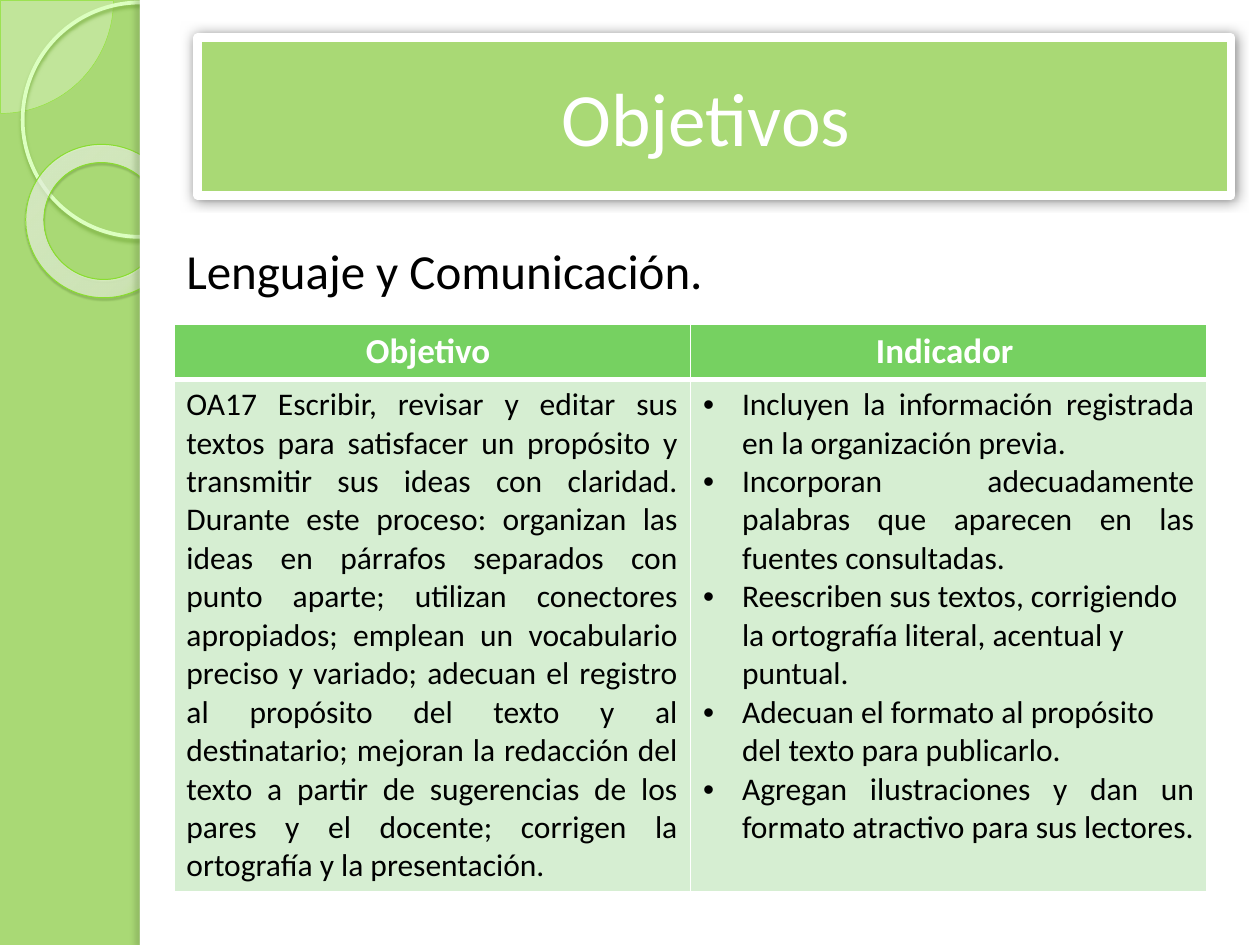
from pptx import Presentation
from pptx.dml.color import RGBColor
from pptx.enum.shapes import MSO_SHAPE
from pptx.enum.text import MSO_ANCHOR, MSO_AUTO_SIZE, PP_ALIGN
from pptx.oxml.ns import qn
from pptx.util import Inches, Pt
from lxml.etree import SubElement

TITLE = "Objetivos "
SUBTITLE = "Lenguaje y Comunicación."
HEADERS = ["Objetivo ", "Indicador "]
OBJECTIVE = (
    "OA17 Escribir, revisar y editar sus textos para satisfacer un propósito y "
    "transmitir sus ideas con claridad. Durante este proceso: organizan las ideas "
    "en párrafos separados con punto aparte; utilizan conectores apropiados; "
    "emplean un vocabulario preciso y variado; adecuan el registro al propósito "
    "del texto y al destinatario; mejoran la redacción del texto a partir de "
    "sugerencias de los pares y el docente; corrigen la ortografía y la presentación."
)
INDICATORS = [
    ("Incluyen la información registrada en la organización previa.", PP_ALIGN.JUSTIFY),
    ("Incorporan adecuadamente palabras que aparecen en las fuentes consultadas.", PP_ALIGN.JUSTIFY),
    ("Reescriben sus textos, corrigiendo la ortografía literal, acentual y puntual.", PP_ALIGN.LEFT),
    ("Adecuan el formato al propósito del texto para publicarlo.", PP_ALIGN.LEFT),
    ("Agregan ilustraciones y dan un formato atractivo para sus lectores.", PP_ALIGN.JUSTIFY),
]

FONT = "Calibri"
WHITE = RGBColor(0xFF, 0xFF, 0xFF)
BLACK = RGBColor(0, 0, 0)
GREEN = RGBColor(0xA9, 0xD9, 0x75)
HEADER_GREEN = RGBColor(0x76, 0xD1, 0x61)
CELL_GREEN = RGBColor(0xD6, 0xEE, 0xD2)
PIE_FILL = RGBColor(0xF2, 0xFF, 0xE7)
PIE_LINE = RGBColor(0x92, 0xE5, 0x39)
RING_LINE = RGBColor(0xDC, 0xFF, 0xC0)
RING_SHADOW = RGBColor(0x7E, 0xB3, 0x44)
DONUT_LINE = RGBColor(0x89, 0xDE, 0x2E)
DONUT_SHADOW = RGBColor(0x3F, 0x62, 0x19)
PANEL_SHADOW = RGBColor(0x54, 0x6E, 0x38)
DONUT_STOPS = [
    (0, RGBColor(0xF6, 0xFF, 0xF0), 70),
    (70, RGBColor(0xFB, 0xFF, 0xF7), 55),
    (100, RGBColor(0x98, 0xFF, 0x28), 60),
]
DONUT_FOCUS = {"l": -408, "t": -50, "r": 508, "b": 150}


def add_color(parent, color, alpha=100):
    element = SubElement(parent, qn("a:srgbClr"), val=str(color))
    if alpha < 100:
        SubElement(element, qn("a:alpha"), val=str(alpha * 1000))


def set_shadow(shape, color, alpha, blur, distance, angle):
    shape.shadow.inherit = False
    effects = shape._element.spPr.find(qn("a:effectLst"))
    shadow = SubElement(
        effects, qn("a:outerShdw"), blurRad=str(Pt(blur)), dist=str(Pt(distance)),
        dir=str(angle * 60000), algn="ctr", rotWithShape="0",
    )
    add_color(shadow, color, alpha)


def set_line(shape, color, width):
    shape.line.color.rgb = color
    shape.line.width = Pt(width)


def add_decoration(slide, kind, box, fill=None, line=None, shadow=None):
    shape = slide.shapes.add_shape(kind, *map(Inches, box))
    shape.shadow.inherit = False
    if fill is None:
        shape.fill.background()
    else:
        shape.fill.solid()
        shape.fill.fore_color.rgb = fill
    if line:
        set_line(shape, *line)
    else:
        shape.line.fill.background()
    if shadow:
        set_shadow(shape, *shadow)
    return shape


def set_donut_gradient(shape):
    properties = shape._element.spPr
    blank = properties.find(qn("a:noFill"))
    gradient = properties.makeelement(qn("a:gradFill"), {"rotWithShape": "1"})
    properties.replace(blank, gradient)
    stops = SubElement(gradient, qn("a:gsLst"))
    for position, color, alpha in DONUT_STOPS:
        add_color(SubElement(stops, qn("a:gs"), pos=str(position * 1000)), color, alpha)
    route = SubElement(gradient, qn("a:path"))
    route.set("path", "circle")
    focus = {side: str(value * 1000) for side, value in DONUT_FOCUS.items()}
    SubElement(route, qn("a:fillToRect"), focus)


def set_font(paragraph, size, color, bold=False):
    paragraph.font.name = FONT
    paragraph.font.size = Pt(size)
    paragraph.font.color.rgb = color
    paragraph.font.bold = bold


def set_bullet(paragraph):
    properties = paragraph._p.get_or_add_pPr()
    properties.set("marL", str(Inches(0.31)))
    properties.set("indent", str(-Inches(0.31)))
    bullet_font = properties.makeelement(qn("a:buFont"), {"typeface": "Arial"})
    bullet = properties.makeelement(qn("a:buChar"), {"char": "•"})
    properties.insert(0, bullet_font)
    properties.insert(1, bullet)


def format_cell(cell, fill, bottom_width):
    cell.fill.solid()
    cell.fill.fore_color.rgb = fill
    properties = cell._tc.get_or_add_tcPr()
    for index, (side, width) in enumerate(zip("LRTB", (1, 1, 1, bottom_width))):
        border = properties.makeelement(qn(f"a:ln{side}"), {"w": str(Pt(width))})
        add_color(SubElement(border, qn("a:solidFill")), WHITE)
        properties.insert(index, border)


def add_decorations(slide):
    pie = add_decoration(slide, MSO_SHAPE.PIE, (-0.89, -0.89, 1.79, 1.79), PIE_FILL, (PIE_LINE, 0.25))
    pie.adjustments[0] = 0
    pie.adjustments[1] = 54
    pie_color = pie._element.spPr.find(qn("a:solidFill"))[0]
    SubElement(pie_color, qn("a:alpha"), val="33000")
    add_decoration(slide, MSO_SHAPE.OVAL, (0.18, 0.02, 1.86, 1.86), None,
                   (RING_LINE, 2.15), (RING_SHADOW, 85, 2, 2, 90))
    donut = add_decoration(slide, MSO_SHAPE.DONUT, (0.2, 1.15, 1.23, 1.21), None,
                           (DONUT_LINE, 0.58), (DONUT_SHADOW, 35, 1, 1.2, 75))
    donut.adjustments[0] = 0.12
    donut.rotation = 38.6
    set_donut_gradient(donut)
    add_decoration(slide, MSO_SHAPE.RECTANGLE, (1.11, 0, 8.89, 7.5), WHITE)
    add_decoration(slide, MSO_SHAPE.RECTANGLE, (1.11, 0, 0.08, 7.5), WHITE,
                   shadow=(PANEL_SHADOW, 25, 3, 3, 180))


def add_title(slide):
    title = slide.shapes.title
    title.left, title.top, title.width, title.height = map(Inches, (1.57, 0.3, 8.2, 1.25))
    title.fill.solid()
    title.fill.fore_color.rgb = GREEN
    set_line(title, WHITE, 5)
    set_shadow(title, BLACK, 50, 7.5, 0, 0)
    frame = title.text_frame
    frame.text = TITLE
    frame.auto_size = MSO_AUTO_SIZE.NONE
    frame.vertical_anchor = MSO_ANCHOR.MIDDLE
    frame.paragraphs[0].alignment = PP_ALIGN.CENTER
    set_font(frame.paragraphs[0], 43, WHITE)
    slide.shapes._spTree.append(title._element)


def add_objectives_table(slide):
    table = slide.shapes.add_table(2, 2, *map(Inches, (1.38, 2.57, 8.2, 4.43))).table
    table.horz_banding = False
    table.rows[0].height = Inches(0.41)
    table.rows[1].height = Inches(4.02)
    for column, header in enumerate(HEADERS):
        cell = table.cell(0, column)
        cell.text = header
        cell.text_frame.paragraphs[0].alignment = PP_ALIGN.CENTER
        set_font(cell.text_frame.paragraphs[0], 20, WHITE, True)
        format_cell(cell, HEADER_GREEN, 3)
    for column, entries in enumerate([[(OBJECTIVE, PP_ALIGN.JUSTIFY)], INDICATORS]):
        cell = table.cell(1, column)
        cell.text = "\n".join(text for text, alignment in entries)
        for paragraph, (text, alignment) in zip(cell.text_frame.paragraphs, entries):
            paragraph.alignment = alignment
            set_font(paragraph, 18, BLACK)
            if column == 1:
                set_bullet(paragraph)
        format_cell(cell, CELL_GREEN, 1)


def add_subtitle(slide):
    frame = slide.shapes.add_textbox(*map(Inches, (1.38, 1.86, 7.32, 0.57))).text_frame
    frame.word_wrap = True
    frame.auto_size = MSO_AUTO_SIZE.SHAPE_TO_FIT_TEXT
    frame.text = SUBTITLE
    set_font(frame.paragraphs[0], 28, BLACK)


presentation = Presentation()
presentation.slide_width, presentation.slide_height = Inches(10), Inches(7.5)
slide = presentation.slides.add_slide(presentation.slide_layouts[5])
slide.background.fill.solid()
slide.background.fill.fore_color.rgb = GREEN
add_decorations(slide)
add_title(slide)
add_objectives_table(slide)
add_subtitle(slide)
presentation.save("out.pptx")
